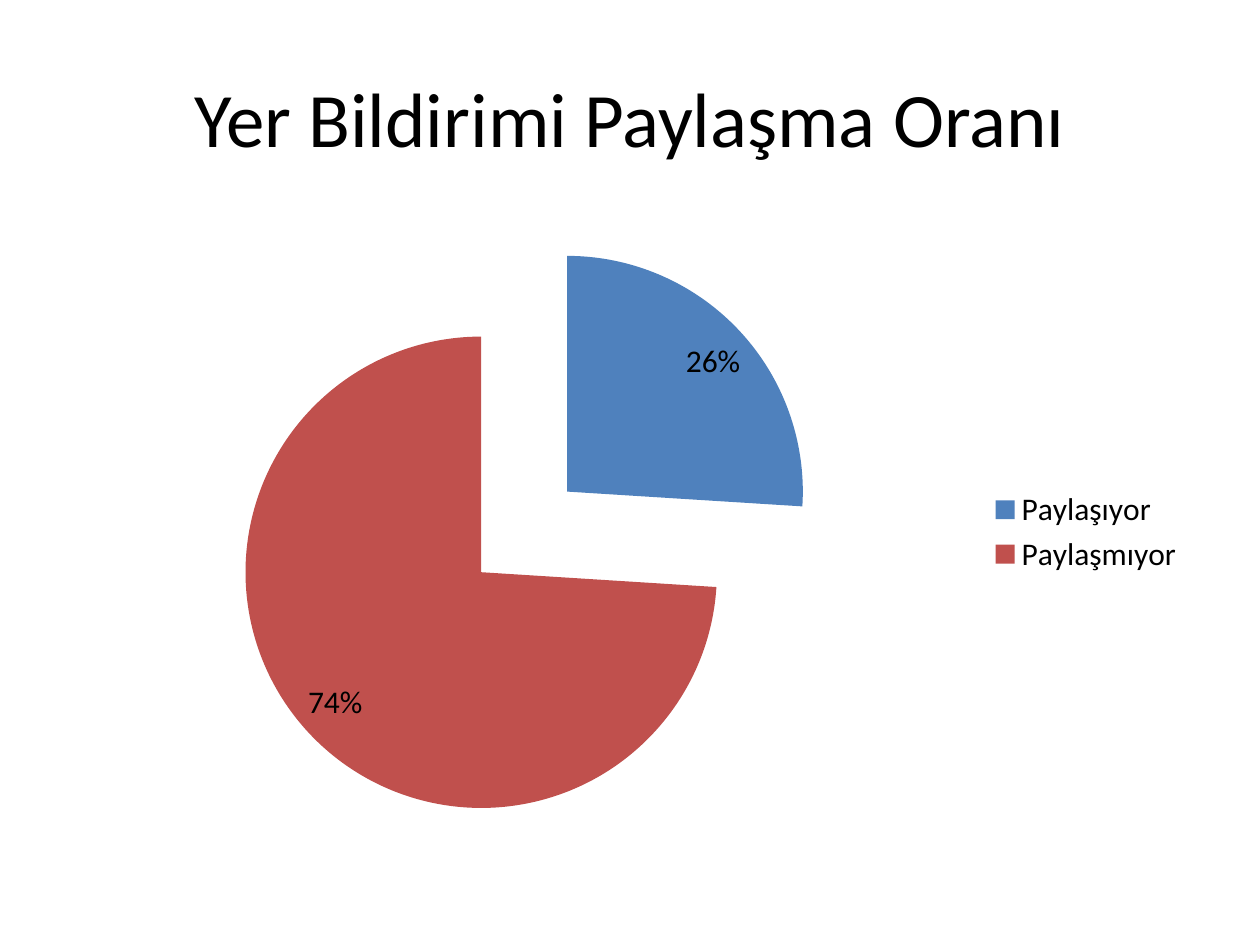
"""Build the slide on the share of people who post their location."""
from dataclasses import dataclass

from lxml.etree import QName
from pptx import Presentation
from pptx.chart.data import CategoryChartData
from pptx.dml.color import RGBColor
from pptx.enum.chart import XL_CHART_TYPE as ChartType, XL_LEGEND_POSITION as LegendPosition
from pptx.enum.text import MSO_ANCHOR as Anchor, PP_ALIGN as Align
from pptx.oxml import parse_xml
from pptx.oxml.ns import qn
from pptx.slide import Slide
from pptx.util import Emu, Pt

PX_PER_INCH = 126
FONT = "Calibri"
COLORS = {"text": "000000", "sharing": "4F81BD", "not_sharing": "C0504D"}


@dataclass(frozen=True)
class Box:
    left: int
    top: int
    width: int
    height: int

    def emu(self) -> tuple[Emu, ...]:
        return tuple(px(n) for n in (self.left, self.top, self.width, self.height))


@dataclass(frozen=True)
class Slice:
    label: str
    percent: int
    color: str


SLICES = (
    Slice("Paylaşıyor", 26, "sharing"),
    Slice("Paylaşmıyor", 74, "not_sharing"),
)


def px(length: int) -> Emu:
    return Emu(round(length * 914400 / PX_PER_INCH))


def color(key: str) -> RGBColor:
    return RGBColor.from_string(COLORS[key])


def style_font(font, size: int) -> None:
    font.name = FONT
    font.size = Pt(size)
    font.color.rgb = color("text")


def write_heading(slide: Slide, wording: str, box: Box) -> None:
    heading = slide.shapes.title
    heading.left, heading.top, heading.width, heading.height = box.emu()
    frame = heading.text_frame
    frame.text = wording
    frame.vertical_anchor = Anchor.MIDDLE
    paragraph = frame.paragraphs[0]
    paragraph.alignment = Align.CENTER
    style_font(paragraph.runs[0].font, 44)


def explode(series, percent: int) -> None:
    namespace = QName(qn("c:explosion")).namespace
    explosion = parse_xml(f'<c:explosion xmlns:c="{namespace}" val="{percent}"/>')
    series._element.find(qn("c:tx")).addnext(explosion)


def draw_pie(slide: Slide, slices: tuple[Slice, ...], box: Box) -> None:
    shares = CategoryChartData(number_format="0")
    shares.categories = [part.label for part in slices]
    shares.add_series("Series 1", [part.percent for part in slices])
    pie = slide.shapes.add_chart(ChartType.PIE, *box.emu(), shares).chart
    style_font(pie.font, 18)
    pie.has_title = False
    pie.has_legend = True
    pie.legend.position = LegendPosition.RIGHT
    pie.legend.include_in_layout = False

    plot = pie.plots[0]
    plot.vary_by_categories = True
    plot.has_data_labels = True
    labels = plot.data_labels
    labels.show_value = False
    labels.show_percentage = True
    labels.number_format = "0%"
    labels.number_format_is_linked = False

    series = plot.series[0]
    explode(series, 25)
    for index, part in enumerate(slices):
        fill = series.points[index].format.fill
        fill.solid()
        fill.fore_color.rgb = color(part.color)


def main() -> None:
    deck = Presentation()
    deck.slide_width, deck.slide_height = px(1260), px(945)
    slide = deck.slides.add_slide(deck.slide_layouts[5])
    write_heading(slide, "Yer Bildirimi Paylaşma Oranı", Box(63, 38, 1134, 158))
    draw_pie(slide, SLICES, Box(63, 220, 1134, 624))
    deck.save("out.pptx")


if __name__ == "__main__":
    main()
